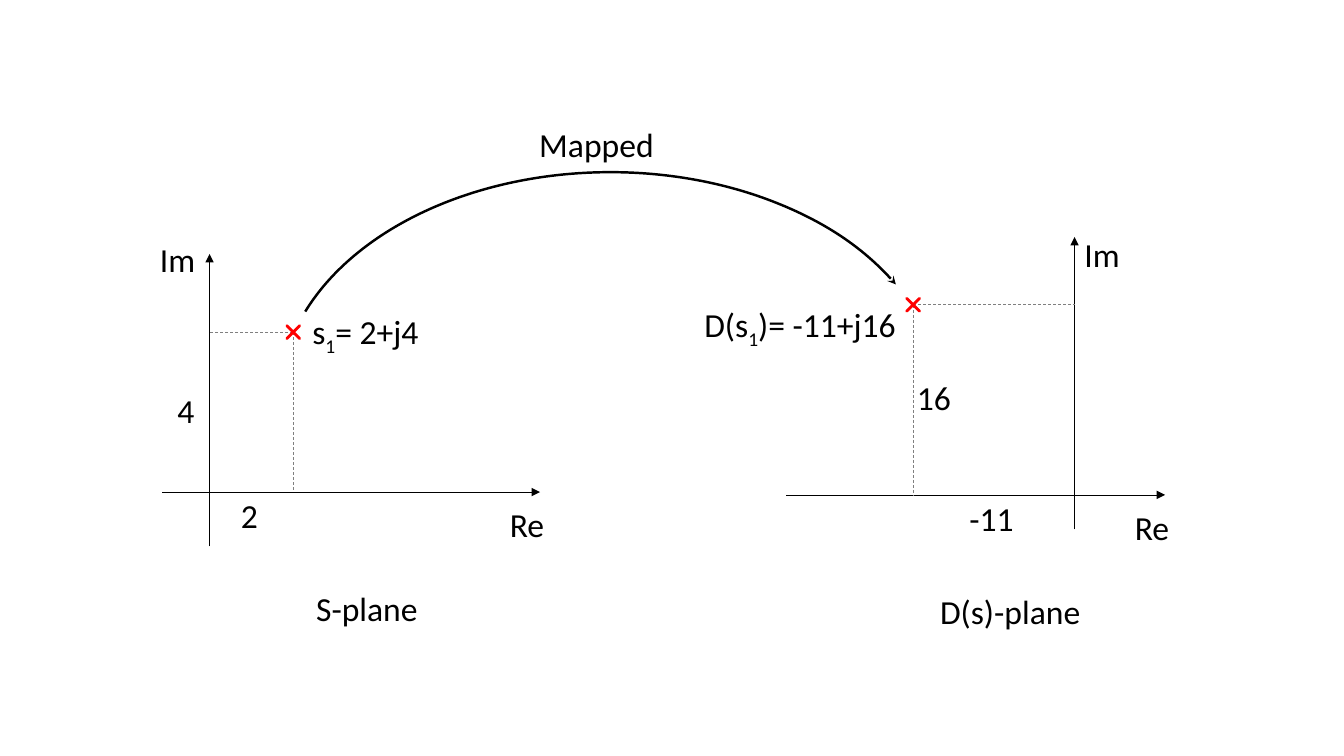
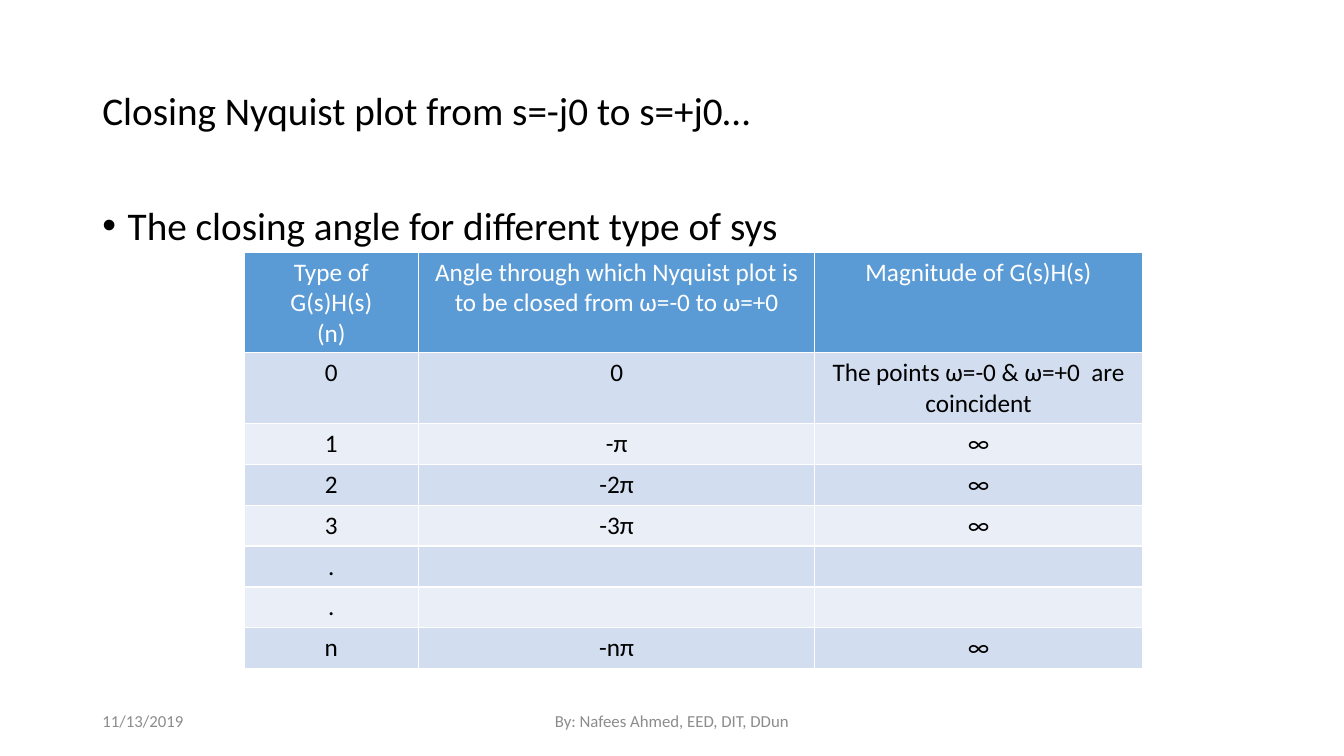
from dataclasses import dataclass

from pptx import Presentation
from pptx.dml.color import RGBColor
from pptx.enum.dml import MSO_LINE_DASH_STYLE as DASH
from pptx.enum.shapes import MSO_CONNECTOR, MSO_SHAPE
from pptx.enum.text import MSO_ANCHOR, PP_ALIGN
from pptx.oxml.ns import qn
from pptx.util import Cm, Pt
from lxml.etree import SubElement

FONT = "Calibri"
BLACK = RGBColor(0x00, 0x00, 0x00)
WHITE = RGBColor(0xFF, 0xFF, 0xFF)
RED = RGBColor(0xFF, 0x00, 0x00)
GUIDE_GREY = RGBColor(0x7F, 0x7F, 0x7F)
FOOTER_GREY = RGBColor(0x8C, 0x8C, 0x8C)
HEADER_BLUE = RGBColor(0x5B, 0x9B, 0xD5)
BANDS = (RGBColor(0xD2, 0xDE, 0xEF), RGBColor(0xEA, 0xEF, 0xF7))

LABEL_HEIGHT = 1.28
CROSS_SIZE = 0.46
MARGIN = 2.33
CONTENT_WIDTH = 29.21

TABLE_ROWS = (
    ("Type of G(s)H(s)\n(n)",
     "Angle through which Nyquist plot is to be closed from ω=-0 to ω=+0",
     "Magnitude of G(s)H(s)"),
    ("0", "0", "The points ω=-0 & ω=+0  are coincident"),
    ("1", "-π", "∞"),
    ("2", "-2π", "∞"),
    ("3", "-3π", "∞"),
    (".", "", ""),
    (".", "", ""),
    ("n", "-nπ", "∞"),
)


@dataclass
class Plane:
    """A complex plane with one marked point; lengths in cm."""
    name: str
    origin: tuple
    re_span: tuple
    im_span: tuple
    point: tuple
    labels: tuple  # (parts, left, top, width)


S_PLANE = Plane(
    "S-plane", (5.28, 12.4), (4.09, 13.61), (13.77, 6.4), (7.39, 8.37),
    ((("Im",), 3.78, 5.89, 1.47),
     (("s", "1", "= 2+j4"), 7.62, 7.72, 3.53),
     (("2",), 5.82, 12.34, 1.47),
     (("4",), 4.22, 9.7, 1.07)))
D_PLANE = Plane(
    "D(s)-plane", (27.08, 12.47), (19.81, 29.36), (13.34, 5.97), (23.01, 7.68),
    ((("Im",), 27.08, 5.77, 1.47),
     (("D(s", "1", ")= -11+j16"), 17.5, 7.54, 5.59),
     (("-11",), 24.18, 12.42, 1.65),
     (("16",), 22.86, 9.37, 1.65)))


def style_paragraph(para, size, color, align=PP_ALIGN.LEFT):
    para.alignment = align
    for span in para.runs:
        span.font.name = FONT
        span.font.size = Pt(size)
        span.font.bold = False
        span.font.color.rgb = color


def add_text(page, parts, left, top, width, height=LABEL_HEIGHT, size=24,
             color=BLACK, align=PP_ALIGN.LEFT, anchor=MSO_ANCHOR.TOP):
    """Add one line of text; every second part is a subscript."""
    box = page.shapes.add_textbox(Cm(left), Cm(top), Cm(width), Cm(height))
    frame = box.text_frame
    frame.word_wrap = True
    frame.vertical_anchor = anchor
    para = frame.paragraphs[0]
    for index, part in enumerate(parts):
        span = para.add_run()
        span.text = part
        if index % 2:
            span.font._element.set("baseline", "-25000")
    style_paragraph(para, size, color, align)
    return para


def add_arrowhead(line, kind):
    SubElement(line._get_or_add_ln(), qn("a:tailEnd"), type=kind)


def add_line(page, start, end, color=BLACK, dash=None, arrow=None):
    line = page.shapes.add_connector(
        MSO_CONNECTOR.STRAIGHT, *(Cm(value) for value in (*start, *end)))
    line.line.color.rgb = color
    line.line.width = Pt(0.5)
    if dash:
        line.line.dash_style = dash
    if arrow:
        add_arrowhead(line.line, arrow)
    SubElement(line._element.spPr, qn("a:effectLst"))


def add_cross(page, x, y):
    cross = page.shapes.add_shape(
        MSO_SHAPE.CROSS, Cm(x - CROSS_SIZE / 2), Cm(y - CROSS_SIZE / 2),
        Cm(CROSS_SIZE), Cm(CROSS_SIZE))
    cross.adjustments[0] = 0.5
    cross.rotation = 45
    cross.shadow.inherit = False
    cross.fill.solid()
    cross.fill.fore_color.rgb = RED
    cross.line.color.rgb = RED
    cross.line.width = Pt(2)


def add_plane(page, plane):
    origin_x, origin_y = plane.origin
    x, y = plane.point
    re_start, re_end = plane.re_span
    im_start, im_end = plane.im_span

    # Axes and guides
    add_line(page, (re_start, origin_y), (re_end, origin_y), arrow="triangle")
    add_line(page, (origin_x, im_start), (origin_x, im_end), arrow="triangle")
    add_line(page, (x, y), (x, origin_y), GUIDE_GREY, DASH.DASH)
    add_line(page, (x, y), (origin_x, y), GUIDE_GREY, DASH.DASH)
    add_cross(page, x, y)

    # Labels
    add_text(page, ("Re",), re_end - 1.01, origin_y + 0.18, 1.47)
    add_text(page, (plane.name,), re_start + 3.63, origin_y + 2.3, 4.88)
    for parts, left, top, width in plane.labels:
        add_text(page, parts, left, top, width)


def add_mapping_arc(page):
    arc = page.shapes.add_shape(
        MSO_SHAPE.ARC, Cm(7.04), Cm(4.34), Cm(16.69), Cm(11.48))
    # Start and end angles, in units of 5/3 degree
    arc.adjustments[0] = 117.69
    arc.adjustments[1] = 202.78
    arc.shadow.inherit = False
    arc.fill.background()
    arc.line.color.rgb = BLACK
    arc.line.width = Pt(1.75)
    add_arrowhead(arc.line, "stealth")


def add_bullet(para):
    props = para._p.get_or_add_pPr()
    props.set("marL", str(Cm(0.64)))
    props.set("indent", str(-Cm(0.64)))
    SubElement(props, qn("a:buFont"), typeface="Arial")
    SubElement(props, qn("a:buChar"), char="•")


def add_angle_table(page):
    widths = (4.4, 9.98, 8.26)
    row_height = 1.03
    table = page.shapes.add_table(
        len(TABLE_ROWS), len(widths), Cm(6.15), Cm(6.35),
        Cm(sum(widths)), Cm(row_height * len(TABLE_ROWS))).table
    for column, width in zip(table.columns, widths):
        column.width = Cm(width)
    for row_index, texts in enumerate(TABLE_ROWS):
        is_header = row_index == 0
        fill = HEADER_BLUE if is_header else BANDS[(row_index - 1) % 2]
        for column_index, text in enumerate(texts):
            cell = table.cell(row_index, column_index)
            cell.fill.solid()
            cell.fill.fore_color.rgb = fill
            cell.text_frame.text = text
            for para in cell.text_frame.paragraphs:
                style_paragraph(para, 18, WHITE if is_header else BLACK,
                                PP_ALIGN.CENTER)


def add_footer(page):
    for text, left, width, align in (
            ("11/13/2019", MARGIN, 7.62, PP_ALIGN.LEFT),
            ("By: Nafees Ahmed, EED, DIT, DDun", 11.22, 11.43, PP_ALIGN.CENTER)):
        add_text(page, (text,), left, 17.65, width, 1.02, 12, FOOTER_GREY,
                 align, MSO_ANCHOR.MIDDLE)


def build_mapping_page(page):
    for plane in (S_PLANE, D_PLANE):
        add_plane(page, plane)
    add_mapping_arc(page)
    add_text(page, ("Mapped",), 13.34, 3, 3.86)


def build_closing_page(page):
    title = add_text(page, ("Closing Nyquist plot from s=-j0 to s=+j0…",),
                     MARGIN, 1.01, CONTENT_WIDTH, 3.68, 28,
                     anchor=MSO_ANCHOR.MIDDLE)
    body = add_text(page, ("The closing angle for different type of sys",),
                    MARGIN, 5.07, CONTENT_WIDTH, LABEL_HEIGHT, 28)
    for para in (title, body):
        para.line_spacing = 0.9
    add_bullet(body)
    add_angle_table(page)
    add_footer(page)


def main():
    deck = Presentation()
    deck.slide_width = Cm(33.87)
    deck.slide_height = Cm(19.05)
    blank = deck.slide_layouts[6]
    for build in (build_mapping_page, build_closing_page):
        build(deck.slides.add_slide(blank))
    deck.save("out.pptx")


if __name__ == "__main__":
    main()
